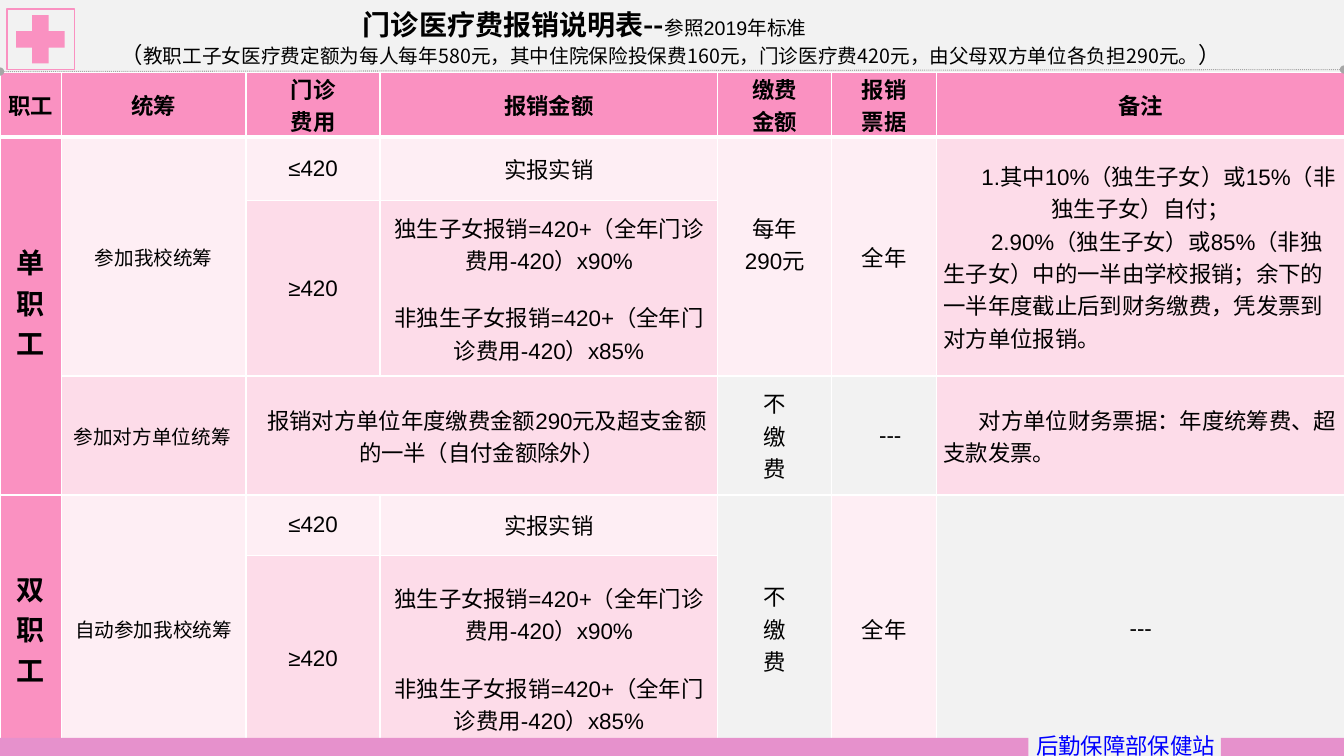
import lxml.etree
import pptx
import pptx.dml.color
import pptx.enum.dml
import pptx.enum.shapes
import pptx.enum.text
import pptx.oxml.ns
import pptx.util

Inches = pptx.util.Inches
Pt = pptx.util.Pt
RGBColor = pptx.dml.color.RGBColor
ALIGN = pptx.enum.text.PP_ALIGN
ANCHOR = pptx.enum.text.MSO_ANCHOR
SHAPE = pptx.enum.shapes.MSO_SHAPE
qn = pptx.oxml.ns.qn

BLACK = RGBColor(0x00, 0x00, 0x00)
WHITE = RGBColor(0xFF, 0xFF, 0xFF)
PAPER = RGBColor(0xF2, 0xF2, 0xF2)
PINK = RGBColor(0xFA, 0x91, 0xC1)
ROSE = RGBColor(0xFD, 0xDC, 0xE9)
BLUSH = RGBColor(0xFE, 0xEE, 0xF4)
ORCHID = RGBColor(0xE6, 0x91, 0xCC)
GREY = RGBColor(0xA6, 0xA6, 0xA6)
BLUE = RGBColor(0x00, 0x00, 0xFF)
LATIN = "Arial"
CJK = "Noto Sans CJK SC"


class PolicySlide:
    def __init__(self, deck):
        self.slide = deck.slides.add_slide(deck.slide_layouts[5])
        self.slide.background.fill.solid()
        self.slide.background.fill.fore_color.rgb = PAPER

    def run(self, paragraph, wording, size=16, bold=False, font=LATIN, color=BLACK):
        piece = paragraph.add_run()
        piece.text = wording
        piece.font.size = Pt(size)
        piece.font.bold = bold
        piece.font.color.rgb = color
        piece.font.name = font
        east_asian = lxml.etree.SubElement(piece.font._element, qn("a:ea"))
        east_asian.set("typeface", CJK)

    def paragraph(self, frame, number, align, indent=0.0, after=0):
        line = frame.paragraphs[0] if number == 0 else frame.add_paragraph()
        line.alignment = align
        line.line_spacing = 1.0
        line.space_before = Pt(0)
        line.space_after = Pt(after)
        line._p.get_or_add_pPr().set("marL", "0")
        line._p.get_or_add_pPr().set("indent", str(Inches(indent)))
        return line

    def title(self, box, lines):
        heading = self.slide.shapes.title
        heading.left, heading.top, heading.width, heading.height = map(Inches, box)
        frame = heading.text_frame
        frame.word_wrap = True
        frame.auto_size = pptx.enum.text.MSO_AUTO_SIZE.NONE
        frame.vertical_anchor = ANCHOR.MIDDLE
        for number, (indent, pieces) in enumerate(lines):
            line = self.paragraph(frame, number, ALIGN.LEFT, indent)
            for wording, style in pieces:
                self.run(line, wording, **style)

    def shape(self, kind, box, fill=None, outline=None):
        form = self.slide.shapes.add_shape(kind, *map(Inches, box))
        form.shadow.inherit = False
        if fill is None:
            form.fill.background()
        else:
            form.fill.solid()
            form.fill.fore_color.rgb = fill
        if outline is None:
            form.line.fill.background()
        else:
            form.line.color.rgb = outline
            form.line.width = Pt(1)
        return form

    def caption(self, box, wording, **style):
        frame = self.slide.shapes.add_textbox(*map(Inches, box)).text_frame
        frame.word_wrap = True
        frame.vertical_anchor = ANCHOR.BOTTOM
        frame.margin_bottom = 0
        self.run(self.paragraph(frame, 0, ALIGN.CENTER), wording, **style)

    def divider(self, start, end):
        rule = self.slide.shapes.add_connector(
            pptx.enum.shapes.MSO_CONNECTOR.STRAIGHT, *map(Inches, start + end))
        rule.line.color.rgb = GREY
        rule.line.width = Pt(0.75)
        rule.line.dash_style = pptx.enum.dml.MSO_LINE.ROUND_DOT
        for tip in ("a:headEnd", "a:tailEnd"):
            lxml.etree.SubElement(rule.line._get_or_add_ln(), qn(tip)).set("type", "oval")
        lxml.etree.SubElement(rule._element.spPr, qn("a:effectLst"))

    def borders(self, cell, bottom):
        properties = cell._tc.get_or_add_tcPr()
        for side, width in (("L", 1), ("R", 1), ("T", 1), ("B", bottom)):
            edge = lxml.etree.SubElement(properties, qn("a:ln" + side))
            edge.set("w", str(Pt(width)))
            paint = lxml.etree.SubElement(edge, qn("a:solidFill"))
            lxml.etree.SubElement(paint, qn("a:srgbClr")).set("val", str(WHITE))

    def table(self, corner, columns, rows):
        frame = self.slide.shapes.add_table(
            len(rows), len(columns), *map(Inches, corner + (sum(columns), sum(rows))))
        grid = frame.table
        grid.first_row = False
        grid.horz_banding = False
        for column, width in zip(grid.columns, columns):
            column.width = Inches(width)
        for row, height in zip(grid.rows, rows):
            row.height = Inches(height)
        for r in range(len(rows)):
            for c in range(len(columns)):
                self.borders(grid.cell(r, c), 3 if r == 0 else 1)
        return grid

    def cell(self, grid, row, column, lines, fill=None, span=(1, 1), align=ALIGN.CENTER,
             indents=(0.0,), after=0, bottom=0.0, **style):
        cell = grid.cell(row, column)
        if span != (1, 1):
            cell.merge(grid.cell(row + span[0] - 1, column + span[1] - 1))
        cell.margin_left = cell.margin_right = Inches(0.07)
        cell.margin_top = 0
        cell.margin_bottom = Inches(bottom)
        cell.vertical_anchor = ANCHOR.MIDDLE
        if fill is None:
            cell.fill.background()
        else:
            cell.fill.solid()
            cell.fill.fore_color.rgb = fill
        for number, wording in enumerate(lines):
            line = self.paragraph(cell.text_frame, number, align,
                                  indents[number % len(indents)],
                                  after if number < len(lines) - 1 else 0)
            self.run(line, wording, **style)
        return cell


def main():
    deck = pptx.Presentation()
    deck.slide_width, deck.slide_height = Inches(13.33), Inches(7.5)
    page = PolicySlide(deck)

    cross = page.shape(SHAPE.CROSS, (0.16, 0.15, 0.48, 0.48), fill=PINK)
    cross.adjustments[0] = 0.33
    page.shape(SHAPE.RECTANGLE, (0.07, 0.09, 0.67, 0.6), outline=PINK)

    page.title((0.16, 0.02, 13.28, 0.71), [
        (3.34, [("门诊医疗费报销说明表--", dict(size=20, bold=True, font=CJK)),
                ("参照", dict(size=14, font=CJK)),
                ("2019年标准", dict(size=14))]),
        (0.94, [("（", dict(font=CJK)),
                ("教职工子女医疗费定额为每人每年580元，其中住院保险投保费160元，"
                 "门诊医疗费420元，由父母双方单位各负担290元。", dict(size=14, font=CJK)),
                ("）", dict(font=CJK))]),
    ])

    policy = page.table((0, 0.72), (0.61, 1.83, 1.33, 3.35, 1.13, 1.04, 4.05),
                        (0.59, 0.63, 1.74, 1.18, 0.6, 2.05))
    headings = (["职工"], ["统筹"], ["门诊", "费用"], ["报销金额"],
                ["缴费", "金额"], ["报销", "票据"], ["备注"])
    for column, heading in enumerate(headings):
        page.cell(policy, 0, column, heading, PINK, bold=True)

    formulas = ["独生子女报销=420+（全年门诊费用-420）x90%",
                "非独生子女报销=420+（全年门诊费用-420）x85%"]
    staff_groups = ((1, "单职工", 3, 0.28, "参加我校统筹"),
                    (4, "双职工", 2, 0.0, "自动参加我校统筹"))
    for row, staff, depth, bottom, scheme in staff_groups:
        page.cell(policy, row, 0, staff, PINK, (depth, 1), bottom=bottom,
                  size=20, bold=True, font=CJK)
        page.cell(policy, row, 1, [scheme], BLUSH, (2, 1), size=14, font=CJK)
        page.cell(policy, row, 2, ["≤420"], BLUSH)
        page.cell(policy, row, 3, ["实报实销"], BLUSH)
        page.cell(policy, row, 5, ["全年"], BLUSH, (2, 1))
        page.cell(policy, row + 1, 2, ["≥420"], ROSE)
        page.cell(policy, row + 1, 3, formulas, ROSE, after=18)

    page.cell(policy, 1, 4, ["每年", "290元"], BLUSH, (2, 1), bottom=0.25)
    notes = page.cell(policy, 1, 6, [
        "1.其中10%（独生子女）或15%（非独生子女）自付；",
        "2.90%（独生子女）或85%（非独生子女）中的一半由学校报销；"
        "余下的一半年度截止后到财务缴费，凭发票到对方单位报销。",
    ], ROSE, (2, 1), align=ALIGN.LEFT, indents=(0.35, 0.47))
    notes.text_frame.paragraphs[0].alignment = ALIGN.CENTER

    page.cell(policy, 3, 1, ["参加对方单位统筹"], ROSE, align=ALIGN.LEFT,
              indents=(0.05,), size=14, font=CJK)
    page.cell(policy, 3, 2, ["报销对方单位年度缴费金额290元及超支金额的一半（自付金额除外）"],
              ROSE, (1, 2), indents=(0.1,))
    page.cell(policy, 3, 4, "不缴费")
    page.cell(policy, 3, 5, ["---"], indents=(0.12,))
    page.cell(policy, 3, 6, ["对方单位财务票据：年度统筹费、超支款发票。"], ROSE,
              align=ALIGN.LEFT, indents=(0.35,))
    page.cell(policy, 4, 4, "不缴费", span=(2, 1))
    page.cell(policy, 4, 6, ["---"], span=(2, 1))

    page.shape(SHAPE.RECTANGLE, (0, 7.32, 10.2, 0.18), fill=ORCHID)
    page.caption((9.31, 6.96, 3.71, 0.57), "后勤保障部保健站", color=BLUE)
    page.shape(SHAPE.RECTANGLE, (12.11, 7.32, 1.23, 0.21), fill=ORCHID)
    page.divider((0, 0.71), (13.33, 0.69))

    deck.save("out.pptx")


if __name__ == "__main__":
    main()
